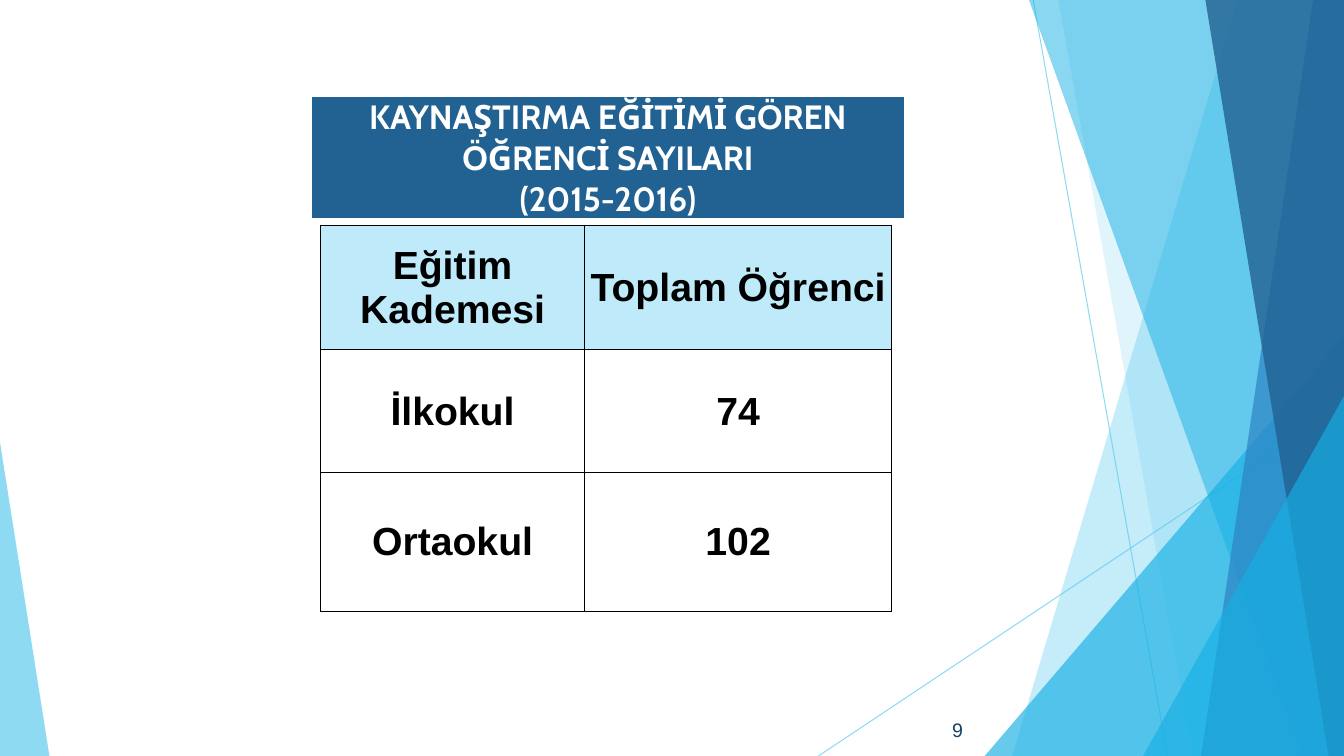
from lxml import etree
from pptx import Presentation
from pptx import util as u
from pptx.dml.color import RGBColor
from pptx.enum import shapes, text
from pptx.oxml import ns

Pt = u.Pt
HUE = {"sky": "5FCBEF", "cyan": "17B0E4", "blue": "2E83C3", "navy": "226292",
       "ink": "174162", "pale": "BFEAF9", "white": "FFFFFF", "black": "000000"}
MID = text.MSO_ANCHOR.MIDDLE


def tint(part, paint, hue, pct):
    """Give a fill a solid colour with the stated opacity."""
    paint.solid()
    paint.fore_color.rgb = RGBColor.from_string(HUE[hue])
    for clr in part._element.spPr.iter(ns.qn("a:srgbClr")):
        etree.SubElement(clr, ns.qn("a:alpha"), val=str(pct * 1000))


def style(frame, align, face, size, hue, bold):
    """Format every paragraph of a text frame."""
    for para in frame.paragraphs:
        para.alignment = align
        for key, val in {"name": face, "size": Pt(size), "bold": bold}.items():
            setattr(para.font, key, val)
        para.font.color.rgb = RGBColor.from_string(HUE[hue])


deck = Presentation()
deck.slide_width, deck.slide_height = Pt(960), Pt(540)
slide = deck.slides.add_slide(deck.slide_layouts[6])
items = slide.shapes

# Thin lines
for ends in [(738, 0, 834, 540), (960, 290, 584.6, 540)]:
    line = items.add_connector(shapes.MSO_CONNECTOR.STRAIGHT, *map(Pt, ends))
    line.line.width = Pt(0.75)
    tint(line, line.line.fill, "sky", 70)
    etree.SubElement(line._element.spPr, ns.qn("a:effectLst"))

# Facets: bands (top x, foot x) run to the right edge,
# wedges (left, top, width, apex) stand on the bottom edge
facets = [((884, 723), "sky", 36), ((756, 852), "sky", 20),
          ((703.4, 240, 256.6, 1), "cyan", 66),
          ((735, 929.5), "cyan", 50), ((938, 858), "blue", 70),
          ((861, 949), "navy", 80),
          ((816.5, 283, 143.5, 1), "cyan", 66),
          ((0, 316, 35.3, 0), "sky", 70)]
for geo, hue, pct in facets:
    if len(geo) == 2:
        top, foot = geo
        pen = items.build_freeform(top, 0, scale=Pt(1))
        pen.add_line_segments([(960, 0), (960, 540), (foot, 540)], close=True)
        facet = pen.convert_to_shape()
    else:
        left, top, wide, apex = geo
        facet = items.add_shape(shapes.MSO_SHAPE.ISOSCELES_TRIANGLE,
                                Pt(left), Pt(top), Pt(wide), Pt(540 - top))
        facet.adjustments[0] = apex
    facet.shadow.inherit = False
    facet.line.fill.background()
    tint(facet, facet.fill, hue, pct)

# Slide number
box = items.add_textbox(Pt(527), Pt(502.6), Pt(168), Pt(37.4))
frame = box.text_frame
frame.word_wrap = True
frame.vertical_anchor = MID
frame.text = "9"
style(frame, text.PP_ALIGN.RIGHT, "Arial", 14, "ink", False)

# Heading table and data table
grids = [
    {"at": (222.2, 68.6), "cols": [424], "rows": [87.4], "face": "Cabin",
     "size": 24, "hue": "white", "anchor": text.MSO_ANCHOR.BOTTOM,
     "fills": ["navy"], "edge": False,
     "cells": [["KAYNAŞTIRMA EĞİTİMİ GÖREN\nÖĞRENCİ SAYILARI\n(2015-2016)"]]},
    {"at": (229, 160.6), "cols": [188.5, 219.5], "rows": [89, 88, 99],
     "face": "Arial", "size": 28, "hue": "black", "anchor": MID,
     "fills": ["pale", "white", "white"], "edge": True,
     "cells": [["Eğitim Kademesi", "Toplam Öğrenci"],
               ["İlkokul", "74"], ["Ortaokul", "102"]]},
]
for grid in grids:
    cols, rows = grid["cols"], grid["rows"]
    table = items.add_table(len(rows), len(cols), *map(Pt, grid["at"]),
                            Pt(sum(cols)), Pt(sum(rows))).table
    table.first_row = table.horz_banding = False
    for col, wide in zip(table.columns, cols):
        col.width = Pt(wide)
    for r, high in enumerate(rows):
        table.rows[r].height = Pt(high)
        for c, words in enumerate(grid["cells"][r]):
            cell = table.cell(r, c)
            cell.text = words
            for key, val in {"margin_left": Pt(0.7), "margin_right": Pt(0.7),
                             "margin_top": Pt(0.7), "margin_bottom": 0,
                             "vertical_anchor": grid["anchor"]}.items():
                setattr(cell, key, val)
            style(cell.text_frame, text.PP_ALIGN.CENTER, grid["face"],
                  grid["size"], grid["hue"], True)
            # Borders: finer around the header row
            for side in "LRTB" if grid["edge"] else "":
                thick = 0.5 if r == 0 and side != "B" else 1
                rule = etree.SubElement(cell._tc.get_or_add_tcPr(),
                                        ns.qn("a:ln" + side), w=str(Pt(thick)))
                solid = etree.SubElement(rule, ns.qn("a:solidFill"))
                etree.SubElement(solid, ns.qn("a:srgbClr"), val=HUE["black"])
            cell.fill.solid()
            cell.fill.fore_color.rgb = RGBColor.from_string(HUE[grid["fills"][r]])

deck.save("out.pptx")
